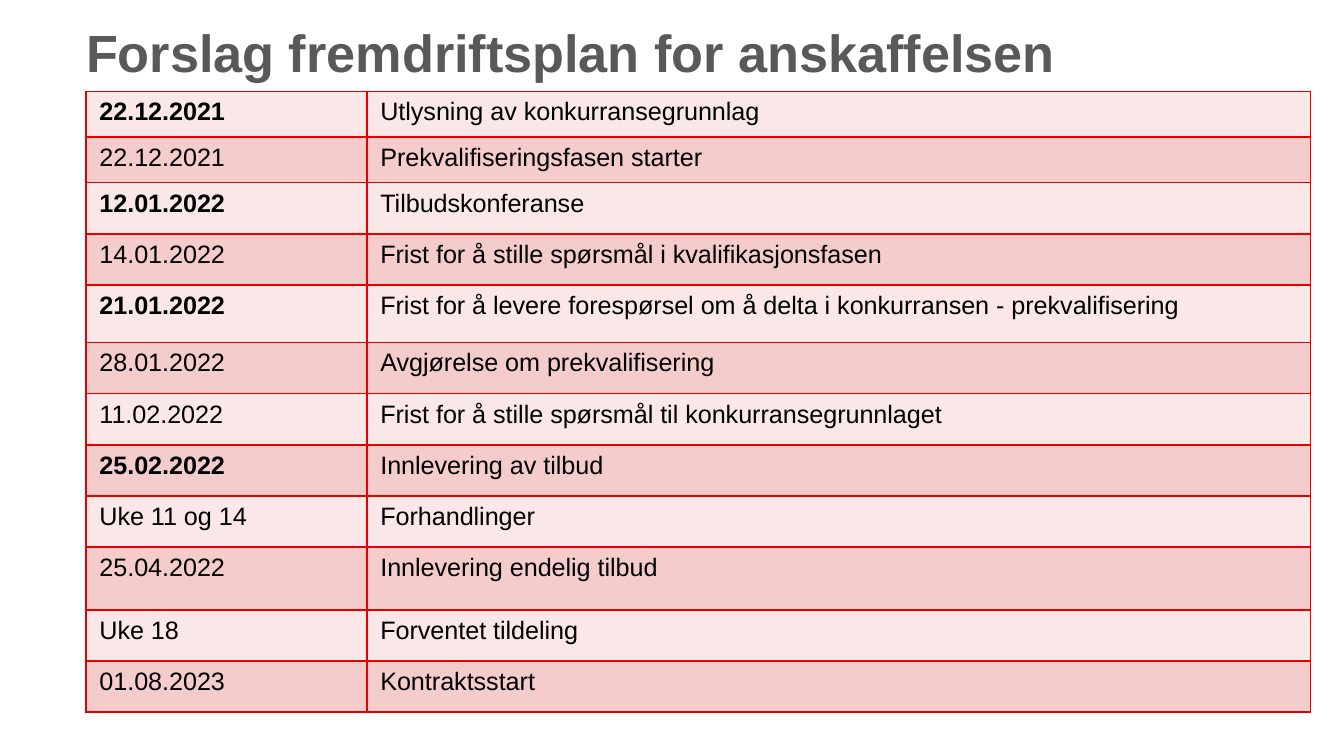
from dataclasses import dataclass

from lxml.etree import SubElement
from pptx import Presentation
from pptx.dml.color import RGBColor
from pptx.enum.text import MSO_ANCHOR as Anchor, PP_ALIGN as Align
from pptx.oxml.ns import qn
from pptx.slide import Slide
from pptx.table import _Cell as Cell
from pptx.text.text import Font
from pptx.util import Inches, Pt

FONT = "Arial"
GREY = "595959"
BLACK = "000000"
RED = "E60000"
BANDS = ("FAE7E7", "F5CCCC")
SLIDE_WIDTH = 10
SLIDE_HEIGHT = SLIDE_WIDTH * 9 / 16
COLUMN_WIDTHS = (2.09, 7.02)


@dataclass(frozen=True)
class Milestone:
    date: str
    activity: str
    key_date: bool = False
    height: float = 0.38


MILESTONES = (
    Milestone("22.12.2021", "Utlysning av konkurransegrunnlag", True, 0.34),
    Milestone("22.12.2021", "Prekvalifiseringsfasen starter", height=0.34),
    Milestone("12.01.2022", "Tilbudskonferanse", True),
    Milestone("14.01.2022", "Frist for å stille spørsmål i kvalifikasjonsfasen"),
    Milestone(
        "21.01.2022",
        "Frist for å levere forespørsel om å delta i konkurransen - prekvalifisering",
        True,
        0.43,
    ),
    Milestone("28.01.2022", "Avgjørelse om prekvalifisering"),
    Milestone("11.02.2022", "Frist for å stille spørsmål til konkurransegrunnlaget"),
    Milestone("25.02.2022", "Innlevering av tilbud", True),
    Milestone("Uke 11 og 14", "Forhandlinger"),
    Milestone("25.04.2022", "Innlevering endelig tilbud", height=0.47),
    Milestone("Uke 18", "Forventet tildeling"),
    Milestone("01.08.2023", "Kontraktsstart"),
)


def color(value: str) -> RGBColor:
    return RGBColor.from_string(value)


def style_font(font: Font, size: float, value: str, bold: bool) -> None:
    font.name = FONT
    font.size = Pt(size)
    font.bold = bold
    font.color.rgb = color(value)


def add_borders(cell: Cell) -> None:
    properties = cell._tc.get_or_add_tcPr()
    for side in ("lnL", "lnR", "lnT", "lnB"):
        line = SubElement(properties, qn(f"a:{side}"), w=str(Pt(1)))
        fill = SubElement(line, qn("a:solidFill"))
        SubElement(fill, qn("a:srgbClr"), val=RED)


def fill_cell(cell: Cell, text: str, band: str, bold: bool) -> None:
    add_borders(cell)
    cell.fill.solid()
    cell.fill.fore_color.rgb = color(band)
    cell.text = text
    style_font(cell.text_frame.paragraphs[0].font, 13.5, BLACK, bold)


def add_title(page: Slide, text: str) -> None:
    title = page.shapes.title
    title.left, title.top = Inches(0.64), Inches(0.15)
    title.width, title.height = Inches(8.73), Inches(0.47)
    frame = title.text_frame
    frame.text = text
    frame.vertical_anchor = Anchor.MIDDLE
    frame.margin_left = frame.margin_right = 0
    frame.margin_top = frame.margin_bottom = 0
    para = frame.paragraphs[0]
    para.alignment = Align.LEFT
    style_font(para.font, 28, GREY, True)


def add_schedule(page: Slide, milestones: tuple[Milestone, ...]) -> None:
    table = page.shapes.add_table(
        len(milestones),
        len(COLUMN_WIDTHS),
        Inches(0.64),
        Inches(0.68),
        Inches(sum(COLUMN_WIDTHS)),
        Inches(sum(item.height for item in milestones)),
    ).table
    table.first_row = False
    for column, width in zip(table.columns, COLUMN_WIDTHS):
        column.width = Inches(width)
    for index, item in enumerate(milestones):
        band = BANDS[index % len(BANDS)]
        table.rows[index].height = Inches(item.height)
        fill_cell(table.cell(index, 0), item.date, band, item.key_date)
        fill_cell(table.cell(index, 1), item.activity, band, False)


def main() -> None:
    deck = Presentation()
    deck.slide_width, deck.slide_height = Inches(SLIDE_WIDTH), Inches(SLIDE_HEIGHT)
    page = deck.slides.add_slide(deck.slide_layouts.get_by_name("Title Only"))
    add_title(page, "Forslag fremdriftsplan for anskaffelsen")
    add_schedule(page, MILESTONES)
    deck.save("out.pptx")


if __name__ == "__main__":
    main()
